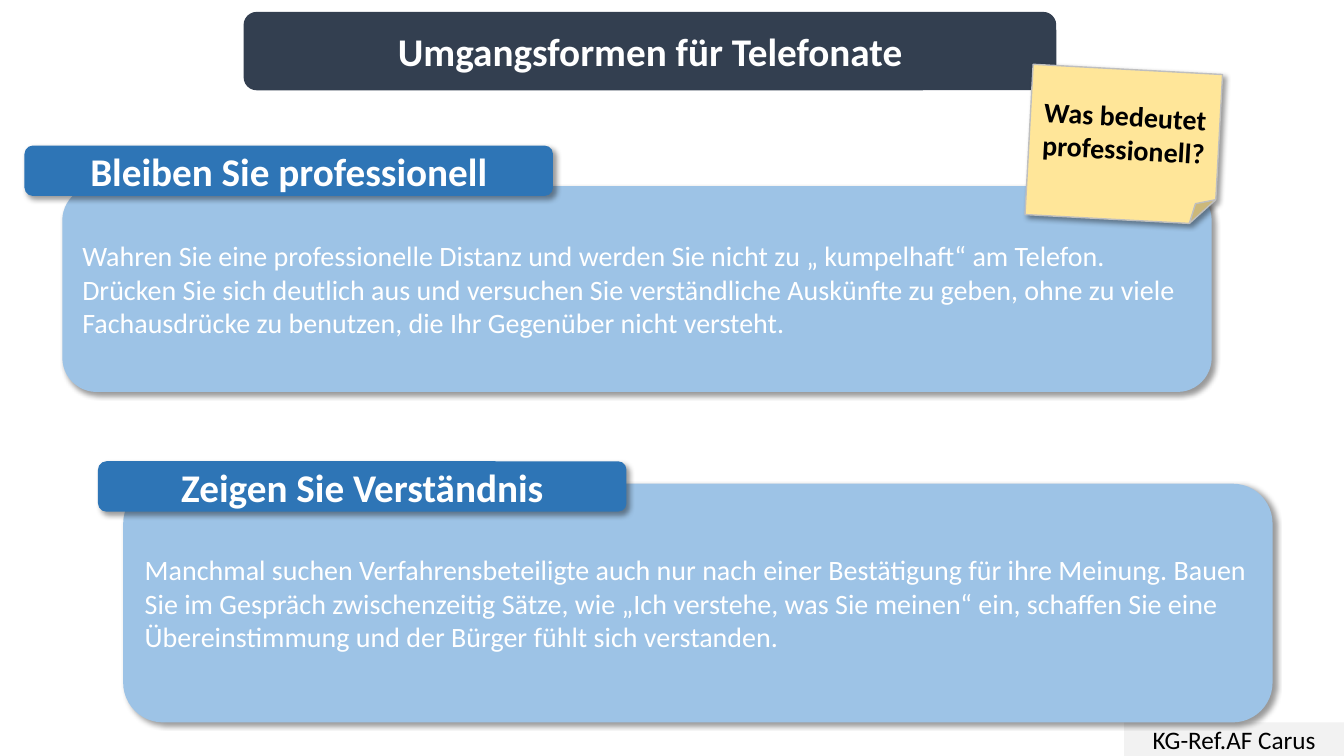
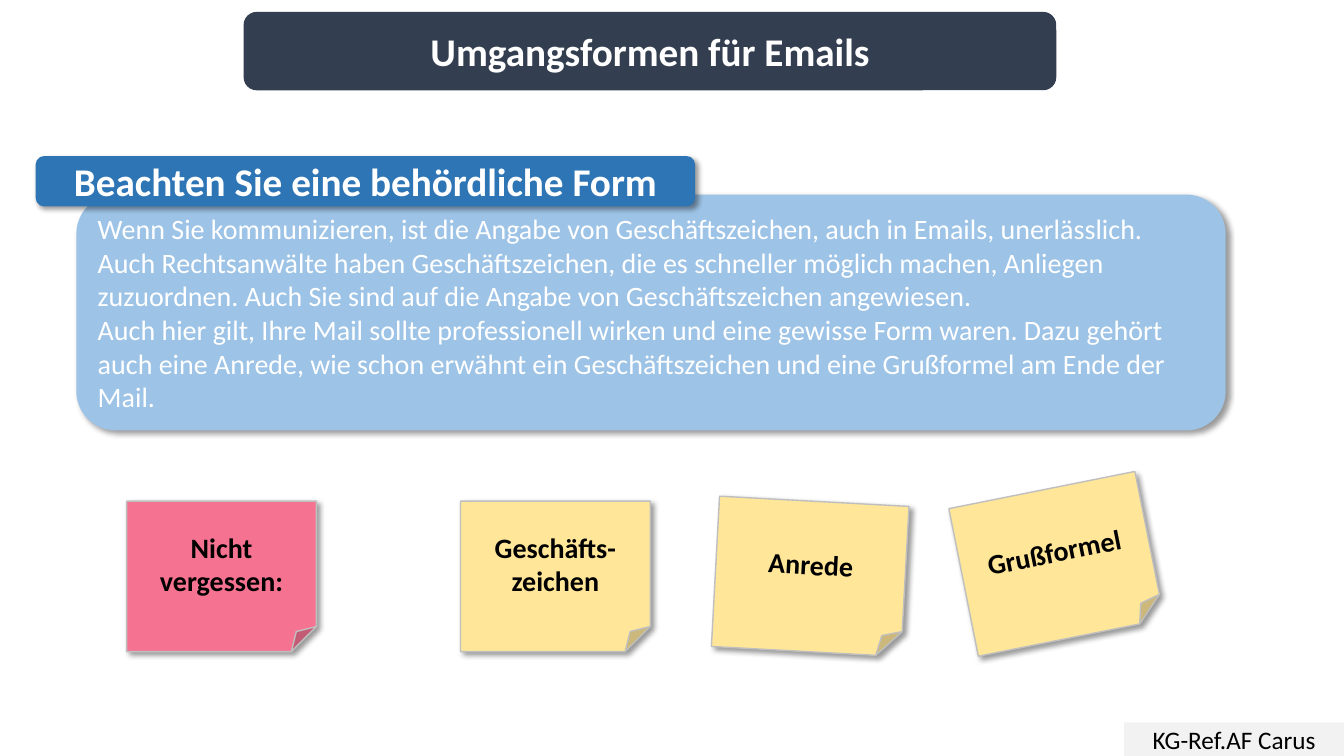
from lxml import etree
from pptx import Presentation
from pptx.dml.color import RGBColor
from pptx.enum.shapes import MSO_SHAPE
from pptx.enum.text import MSO_ANCHOR, PP_ALIGN
from pptx.oxml.ns import qn
from pptx.util import Pt

RECTANGLE = MSO_SHAPE.RECTANGLE
ROUNDED = MSO_SHAPE.ROUNDED_RECTANGLE
FOLDED = MSO_SHAPE.FOLDED_CORNER
MIDDLE = MSO_ANCHOR.MIDDLE
LEFT = PP_ALIGN.LEFT
CENTER = PP_ALIGN.CENTER

NAVY = RGBColor(0x33, 0x3F, 0x50)
BLUE = RGBColor(0x2E, 0x75, 0xB6)
LIGHT_BLUE = RGBColor(0x9D, 0xC3, 0xE6)
YELLOW = RGBColor(0xFF, 0xE6, 0x99)
PINK = RGBColor(0xF6, 0x72, 0x91)
PALE_GREY = RGBColor(0xF2, 0xF2, 0xF2)
GREY = RGBColor(0xBF, 0xBF, 0xBF)
WHITE = RGBColor(0xFF, 0xFF, 0xFF)
BLACK = RGBColor(0x00, 0x00, 0x00)

FONT = "Calibri"
FOOTER = "KG-Ref.AF Carus"
EMU_PER_POINT = 12700
DEGREE = 60000
NOTE_TOP = 358


def add_shadow(shape):
    effects = shape._element.spPr.find(qn("a:effectLst"))
    shadow = etree.SubElement(
        effects, qn("a:outerShdw"), blurRad=str(4 * EMU_PER_POINT),
        dist=str(3 * EMU_PER_POINT), dir=str(45 * DEGREE),
        algn="tl", rotWithShape="0")
    color = etree.SubElement(shadow, qn("a:srgbClr"), val=str(BLACK))
    etree.SubElement(color, qn("a:alpha"), val="40000")


def add_box(page, kind, place, fill, paragraphs, size, color,
            bold=False, align=CENTER, shadow=True):
    box = page.shapes.add_shape(kind, *(Pt(length) for length in place))
    box.fill.solid()
    box.fill.fore_color.rgb = fill
    box.line.fill.background()
    box.shadow.inherit = False
    if shadow:
        add_shadow(box)
    frame = box.text_frame
    frame.word_wrap = True
    frame.vertical_anchor = MIDDLE
    for index, text in enumerate(paragraphs):
        para = frame.add_paragraph() if index else frame.paragraphs[0]
        para.text = text
        para.alignment = align
        para.font.name = FONT
        para.font.size = Pt(size)
        para.font.bold = bold
        para.font.color.rgb = color
    return box


def add_page(deck, title):
    page = deck.slides.add_slide(deck.slide_layouts[6])
    add_box(page, RECTANGLE, (803, 516, 157, 24), PALE_GREY, [FOOTER],
            18, BLACK, shadow=False)
    add_box(page, ROUNDED, (174, 8.5, 580.5, 56), NAVY, [title],
            28, WHITE, bold=True, shadow=False)
    return page


def add_panel(page, left, top, height, paragraphs):
    add_box(page, ROUNDED, (left, top, 821, height), LIGHT_BLUE, paragraphs,
            20, WHITE, align=LEFT)


def add_heading(page, left, top, text, width=377.5):
    add_box(page, ROUNDED, (left, top, width, 36), BLUE, [text],
            28, WHITE, bold=True)


def add_note(page, left, top, text, fill=YELLOW, rotation=0):
    note = add_box(page, FOLDED, (left, top, 135.5, 107.5), fill, [text],
                   20, BLACK, bold=True)
    note.line.color.rgb = GREY
    note.line.width = Pt(1)
    note.rotation = rotation


def build_phone_page(deck):
    page = add_page(deck, "Umgangsformen für Telefonate")
    add_panel(page, 44.5, 133, 147, [
        "Wahren Sie eine professionelle Distanz und werden Sie nicht zu "
        "„ kumpelhaft“ am Telefon.",
        "Drücken Sie sich deutlich aus und versuchen Sie verständliche "
        "Auskünfte zu geben, ohne zu viele Fachausdrücke zu benutzen, die "
        "Ihr Gegenüber nicht versteht.",
    ])
    add_heading(page, 17.5, 104, "Bleiben Sie professionell")
    add_panel(page, 88, 345.5, 170.5, [
        "Manchmal suchen Verfahrensbeteiligte auch nur nach einer "
        "Bestätigung für ihre Meinung. Bauen Sie im Gespräch "
        "zwischenzeitig Sätze, wie „Ich verstehe, was Sie meinen“ ein, "
        "schaffen Sie eine Übereinstimmung und der Bürger fühlt sich "
        "verstanden.",
    ])
    add_heading(page, 70, 329.5, "Zeigen Sie Verständnis")
    add_note(page, 735, 49.5, "Was bedeutet professionell?", rotation=3.1)


def build_mail_page(deck):
    page = add_page(deck, "Umgangsformen für Emails")
    add_panel(page, 54.5, 139, 168.5, [
        "Wenn Sie kommunizieren, ist die Angabe von Geschäftszeichen, auch "
        "in Emails, unerlässlich. Auch Rechtsanwälte haben "
        "Geschäftszeichen, die es schneller möglich machen, Anliegen "
        "zuzuordnen. Auch Sie sind auf die Angabe von Geschäftszeichen "
        "angewiesen.",
        "Auch hier gilt, Ihre Mail sollte professionell wirken und eine "
        "gewisse Form waren. Dazu gehört auch eine Anrede, wie schon "
        "erwähnt ein Geschäftszeichen und eine Grußformel am Ende der Mail.",
    ])
    add_heading(page, 25.5, 111.5, "Beachten Sie eine behördliche Form",
                width=471)
    add_note(page, 90.5, NOTE_TOP, "Nicht vergessen:", fill=PINK)
    add_note(page, 329, NOTE_TOP, "Geschäfts-zeichen")
    add_note(page, 511, NOTE_TOP, "Anrede", rotation=3.1)
    add_note(page, 687, 349, "Grußformel", rotation=348.7)


def main():
    deck = Presentation()
    deck.slide_width = Pt(960)
    deck.slide_height = Pt(540)
    build_phone_page(deck)
    build_mail_page(deck)
    deck.save("out.pptx")


if __name__ == "__main__":
    main()
